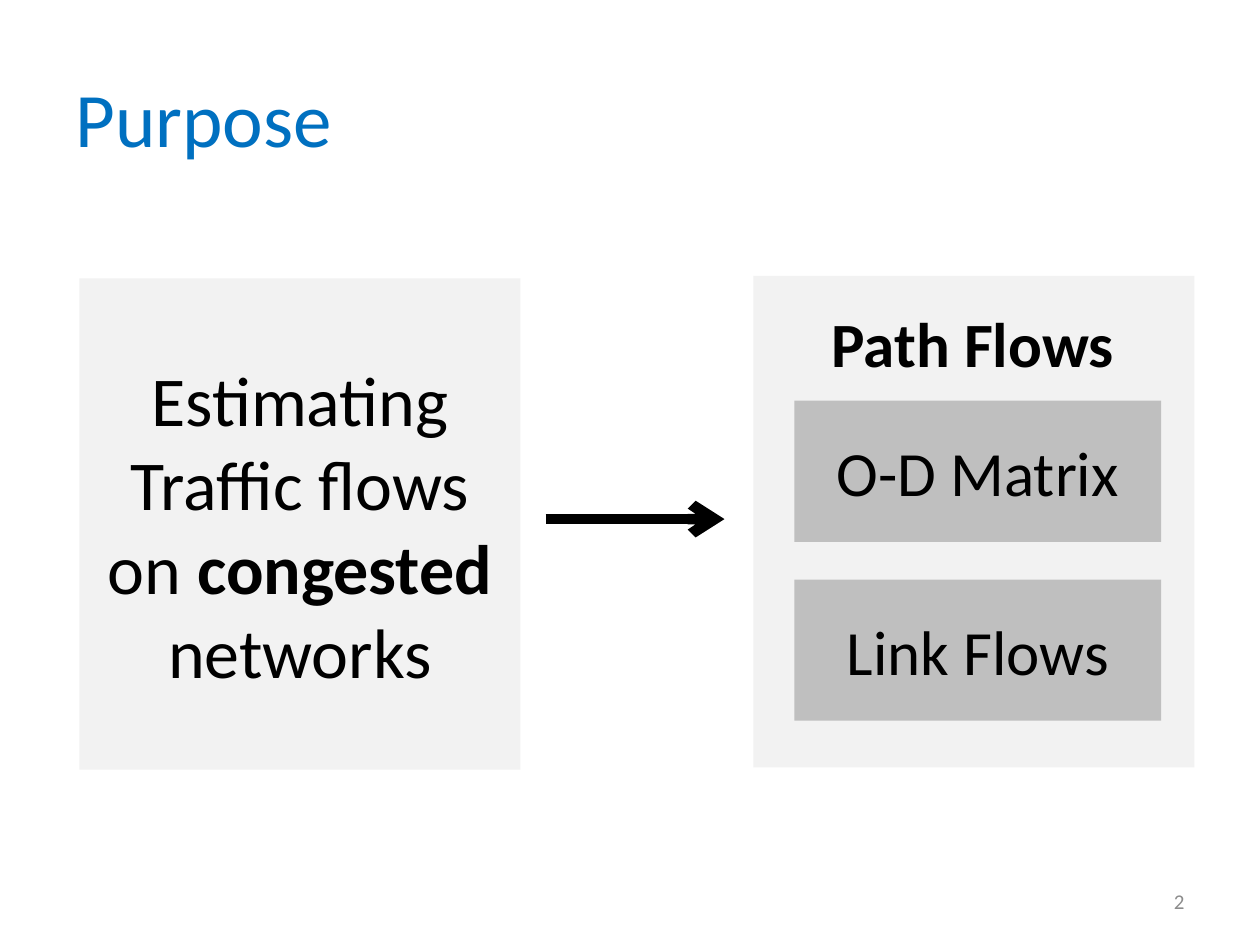
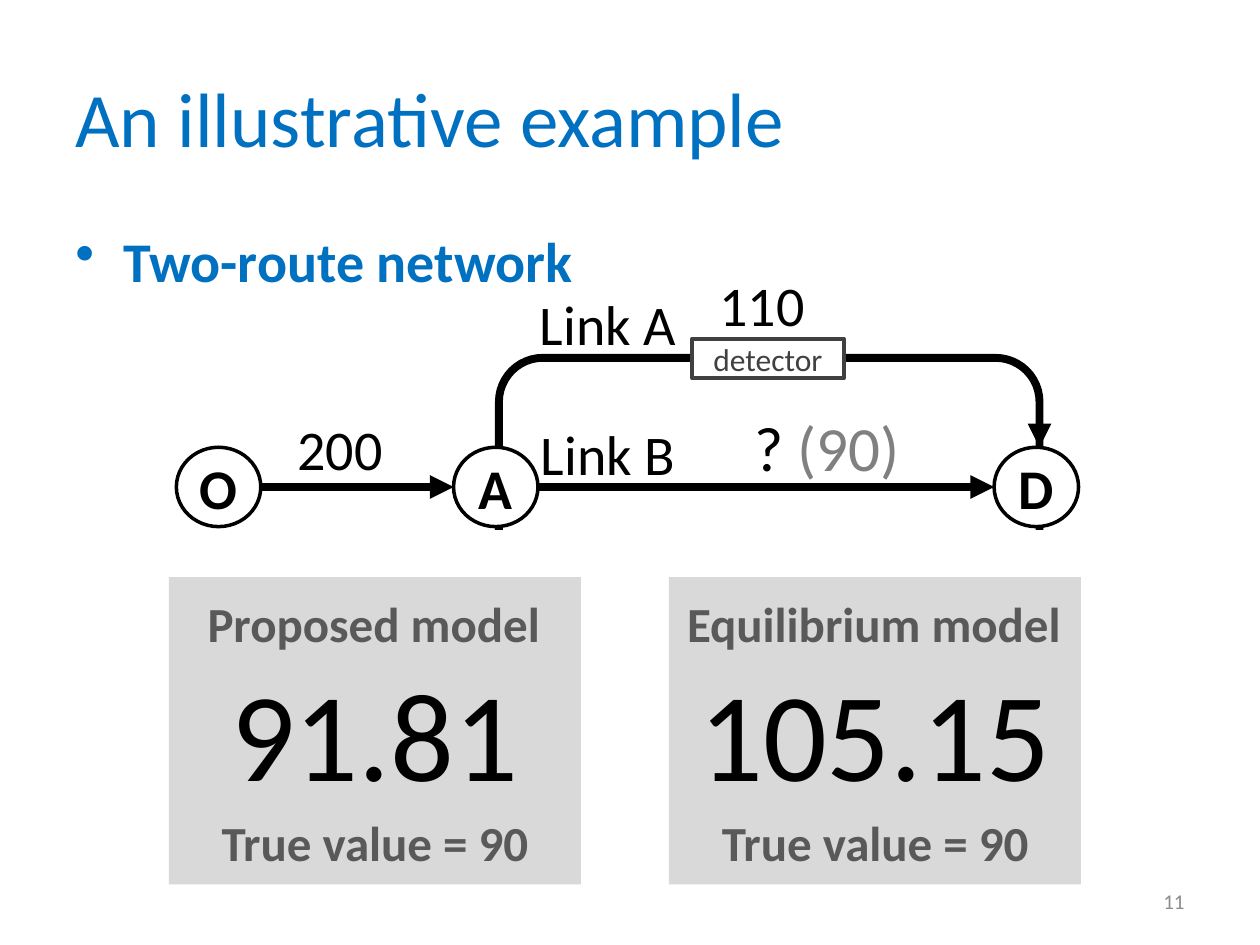
from dataclasses import dataclass

from lxml.etree import SubElement
from pptx import Presentation
from pptx.dml.color import RGBColor
from pptx.enum.shapes import MSO_CONNECTOR as Connector, MSO_SHAPE as Preset
from pptx.enum.text import MSO_ANCHOR as Anchor, PP_ALIGN as Align
from pptx.oxml.ns import qn
from pptx.util import Inches, Pt

COLUMNS, ROWS = 100, 75
CELL = Inches(10) // COLUMNS


@dataclass(frozen=True)
class Theme:
    """Colours, type sizes and line widths, in points, of the deck."""

    font: str = "Calibri"
    accent: str = "0070C0"
    ink: str = "000000"
    paper: str = "FFFFFF"
    panel: str = "F2F2F2"
    tile: str = "BFBFBF"
    card: str = "D9D9D9"
    caption: str = "595959"
    sensor: str = "404040"
    aside: str = "808080"
    footer: str = "8C8C8C"
    title_size: int = 44
    statement_size: int = 40
    tile_size: int = 36
    label_size: int = 32
    caption_size: int = 28
    figure_size: int = 72
    sensor_size: int = 18
    footer_size: int = 12
    outline: float = 2
    road: float = 4.5
    arrow: float = 6


THEME = Theme()


@dataclass(frozen=True)
class Box:
    """A rectangle measured in columns and rows of the slide grid."""

    left: float
    top: float
    width: float
    height: float

    def within(self, left, top, width, height):
        """Return a box placed from this box's top left corner."""
        return Box(self.left + left, self.top + top, width, height)

    def emu(self):
        """Return left, top, width and height as slide lengths."""
        return [round(v * CELL) for v in (self.left, self.top, self.width, self.height)]

    @property
    def right(self):
        """Return the right edge."""
        return self.left + self.width

    @property
    def middle(self):
        """Return the row halfway down."""
        return self.top + self.height / 2


TITLE = Box(5, 3, 90, 12.5)
BODY = Box(5, 17.5, 90, 49.5)
PAGE_NUMBER = Box(71.7, 69.5, 23.3, 4)


def color(value):
    """Turn a hex string into a colour."""
    return RGBColor.from_string(value)


def write(shape, spans, size, ink=THEME.ink, bold=False, align=Align.CENTER, anchor=Anchor.MIDDLE):
    """Fill a shape with one paragraph of (text, overrides) spans."""
    frame = shape.text_frame
    frame.word_wrap = True
    frame.vertical_anchor = anchor
    para = frame.paragraphs[0]
    para.alignment = align
    para.font.name = THEME.font
    para.font.size = Pt(size)
    para.font.bold = bold
    para.font.color.rgb = color(ink)
    for text, changes in [(spans, {})] if isinstance(spans, str) else spans:
        span = para.add_run()
        span.text = text
        if "bold" in changes:
            span.font.bold = changes["bold"]
        if "ink" in changes:
            span.font.color.rgb = color(changes["ink"])
    return para


def add_label(page, box, spans, size, **style):
    """Add a text box and return its paragraph."""
    return write(page.shapes.add_textbox(*box.emu()), spans, size, **style)


def add_block(page, box, fill=None, line=None, width=THEME.outline, preset=Preset.RECTANGLE):
    """Add a flat preset shape with optional fill and outline."""
    shape = page.shapes.add_shape(preset, *box.emu())
    shape.shadow.inherit = False
    if fill:
        shape.fill.solid()
        shape.fill.fore_color.rgb = color(fill)
    else:
        shape.fill.background()
    if line:
        shape.line.color.rgb = color(line)
        shape.line.width = Pt(width)
    else:
        shape.line.fill.background()
    return shape


def add_arrow(page, start, end, width, head="triangle"):
    """Add a straight arrow between two grid points."""
    points = [round(value * CELL) for value in (*start, *end)]
    arrow = page.shapes.add_connector(Connector.STRAIGHT, *points)
    arrow.line.color.rgb = color(THEME.ink)
    arrow.line.width = Pt(width)
    SubElement(arrow.line._get_or_add_ln(), qn("a:tailEnd"), type=head)
    SubElement(arrow._element.spPr, qn("a:effectLst"))


def add_page(deck, title, number):
    """Add a blank page with the shared title and page number."""
    page = deck.slides.add_slide(deck.slide_layouts[6])
    add_label(page, TITLE, title, THEME.title_size, ink=THEME.accent, align=Align.LEFT)
    add_label(page, PAGE_NUMBER, str(number), THEME.footer_size, ink=THEME.footer, align=Align.RIGHT)
    return page


def add_bullet(page, box, text):
    """Add a bold bullet line with a hanging indent."""
    para = add_label(page, box, text, THEME.label_size, ink=THEME.accent,
                     bold=True, align=Align.LEFT, anchor=Anchor.TOP)
    settings = para._p.get_or_add_pPr()
    indent = Inches(0.38)
    settings.set("marL", str(indent))
    settings.set("indent", str(-indent))
    bullet = SubElement(settings, qn("a:buChar"), char="•")
    settings.remove(bullet)
    settings.insert_element_before(bullet, "a:tabLst", "a:defRPr", "a:extLst")


def add_statement(page, box):
    """Add the panel stating the estimation task."""
    spans = [("Estimating Traffic flows on ", {}), ("congested", {"bold": True}), (" networks", {})]
    write(add_block(page, box, THEME.panel), spans, THEME.statement_size)


def add_outputs(page, box):
    """Add the path flow panel with its stacked tiles."""
    add_block(page, box, THEME.panel)
    add_label(page, box.within(4.4, 0.4, 26, 9.8), "Path Flows", THEME.tile_size, bold=True)
    for index, text in enumerate(("O-D Matrix", "Link Flows")):
        tile = add_block(page, box.within(3.25, 9.9 + 14.2 * index, 29.1, 11.2), THEME.tile)
        write(tile, text, THEME.tile_size)


def add_node(page, box, name):
    """Add a round network node."""
    node = add_block(page, box, THEME.paper, THEME.ink, preset=Preset.OVAL)
    frame = node.text_frame
    frame.margin_left = frame.margin_right = frame.margin_top = frame.margin_bottom = 0
    write(node, name, THEME.label_size, bold=True)


def add_network(page, box):
    """Add the two-route network with its nodes, links and flows."""
    nodes = {name: box.within(left, 14.1, 6.7, 6.3) for name, left in (("O", 0), ("A", 22), ("D", 64.9))}
    origin, fork, goal = nodes.values()
    detour = box.within(25.6, 7, 42.9, 20.9)
    add_block(page, detour, line=THEME.ink, width=THEME.road, preset=Preset.ROUNDED_RECTANGLE)
    add_block(page, box.within(22.2, 20.8, 49.6, 8.1), THEME.paper, THEME.paper)
    for start, end in ((origin, fork), (fork, goal)):
        add_arrow(page, (start.right, start.middle), (end.left, end.middle), THEME.road)
    add_arrow(page, (detour.right, goal.top - 3.9), (detour.right, goal.top), THEME.road)
    for name, place in nodes.items():
        add_node(page, place, name)
    sensor = add_block(page, box.within(40.9, 5.5, 12.1, 3.1), THEME.paper, THEME.sensor)
    write(sensor, "detector", THEME.sensor_size, ink=THEME.sensor)
    labels = (("200", 5.3, 11.4, 15.4), ("110", 38.8, 0, 15.4),
              ("Link A", 25.8, 1.5, 16.9), ("Link B", 25.8, 11.8, 16.9))
    for text, left, top, width in labels:
        add_label(page, box.within(left, top, width, 5.5), text, THEME.label_size)
    guess = [("? ", {}), ("(90)", {"ink": THEME.aside})]
    add_label(page, box.within(43.5, 11, 16.3, 6.1), guess, THEME.tile_size)


def add_result(page, box, model, estimate):
    """Add a card comparing a model's estimate with the true value."""
    write(add_block(page, box, THEME.card), estimate, THEME.figure_size)
    for text, place in ((model, box.within(0, 1.5, 32.5, 4.3)),
                        ("True value = 90", box.within(1.6, 18.9, 29.5, 4.2))):
        add_label(page, place, text, THEME.caption_size, ink=THEME.caption, bold=True)


def add_purpose_page(deck):
    """Build the purpose page."""
    page = add_page(deck, "Purpose", 2)
    add_outputs(page, Box(59.8, 21.9, 35, 39))
    add_arrow(page, (43.3, 41.2), (57.5, 41.2), THEME.arrow, "arrow")
    add_statement(page, Box(6.3, 22.1, 35, 39))


def add_example_page(deck):
    """Build the illustrative example page."""
    page = add_page(deck, "An illustrative example", 11)
    add_bullet(page, BODY, "Two-route network")
    add_network(page, Box(14, 21.4, 71.8, 28.9))
    results = (("Proposed model", "91.81"), ("Equilibrium model", "105.15"))
    for index, (model, estimate) in enumerate(results):
        add_result(page, Box(13.4 + 39.7 * index, 45.8, 32.7, 24.4), model, estimate)


def main():
    """Build and save the deck."""
    deck = Presentation()
    deck.slide_width, deck.slide_height = COLUMNS * CELL, ROWS * CELL
    add_purpose_page(deck)
    add_example_page(deck)
    deck.save("out.pptx")


if __name__ == "__main__":
    main()
